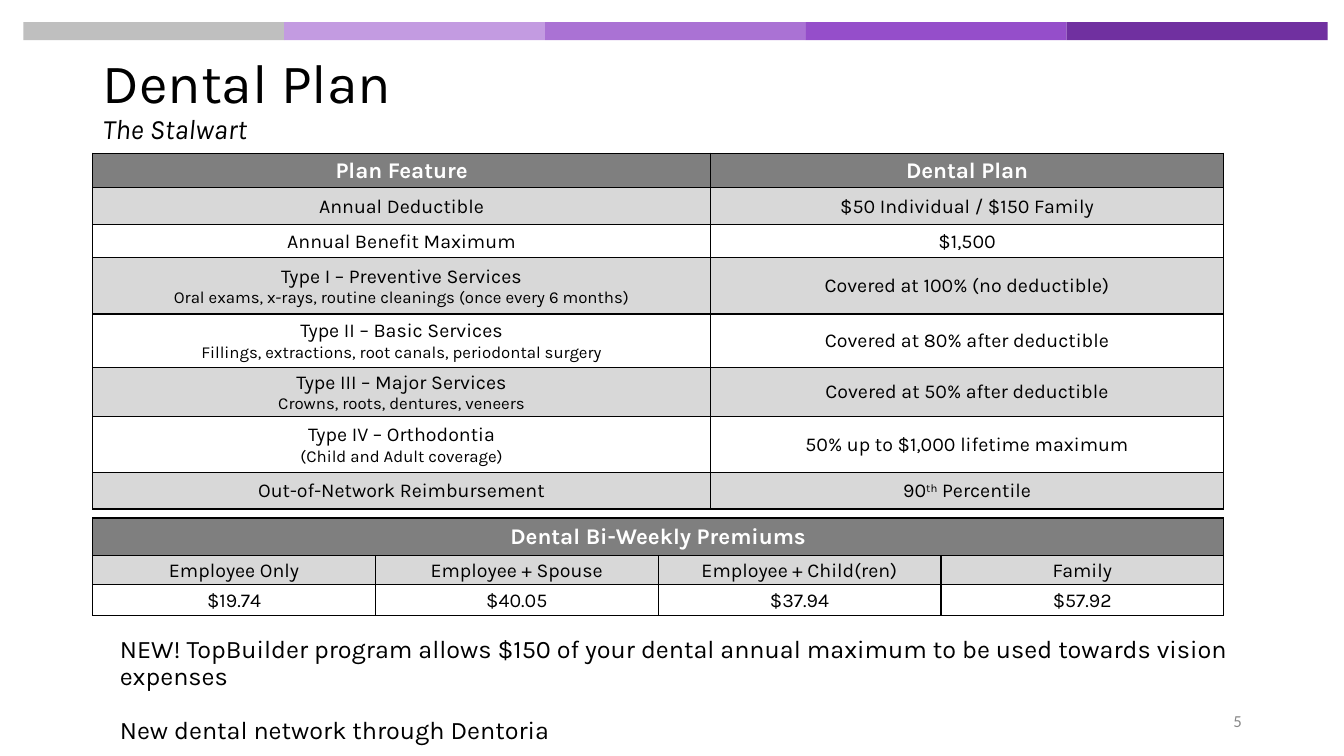
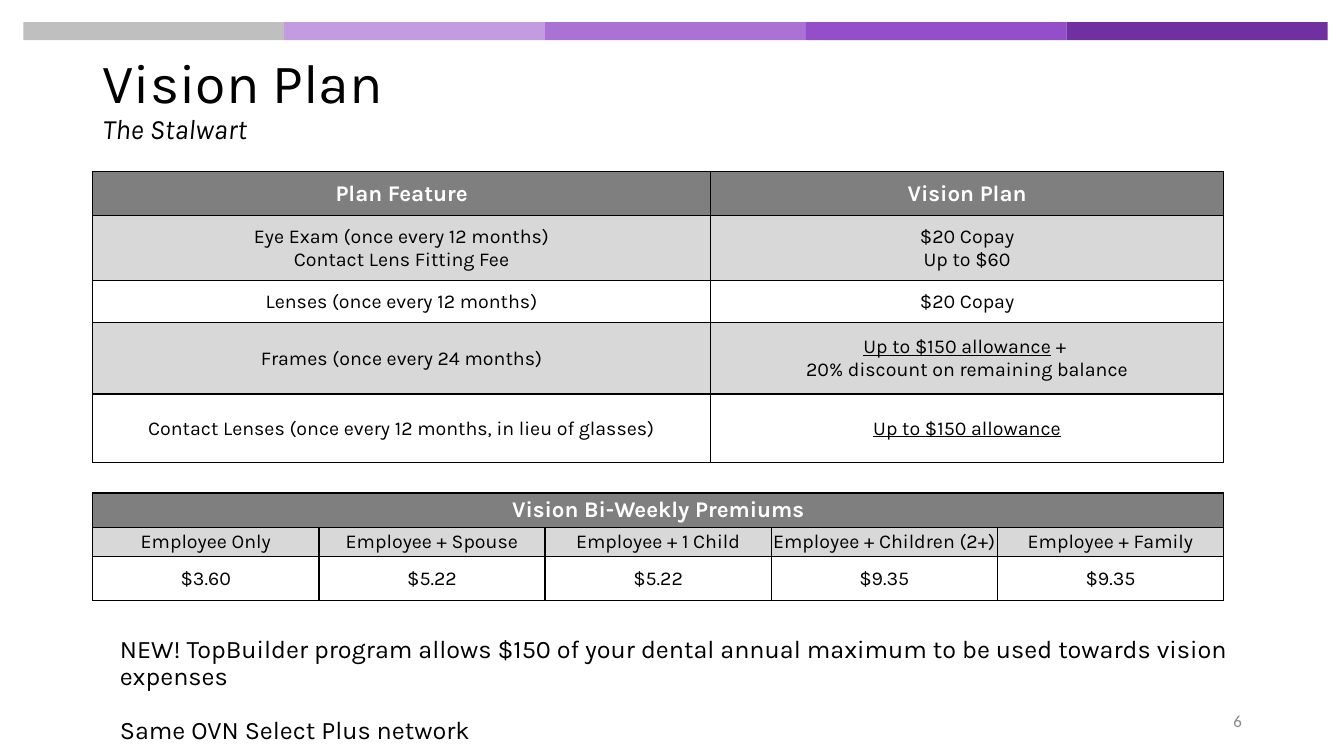
from dataclasses import dataclass

from lxml import etree
from pptx import Presentation
from pptx.dml.color import RGBColor
from pptx.enum.shapes import MSO_SHAPE
from pptx.enum.text import MSO_ANCHOR, PP_ALIGN
from pptx.oxml.ns import qn
from pptx.util import Inches, Pt

RECTANGLE = MSO_SHAPE.RECTANGLE
LEFT, CENTER, RIGHT = PP_ALIGN.LEFT, PP_ALIGN.CENTER, PP_ALIGN.RIGHT
TOP, MIDDLE = MSO_ANCHOR.TOP, MSO_ANCHOR.MIDDLE
SLIDE_WIDTH, SLIDE_HEIGHT = Inches(13.333), Inches(7.5)
BLANK_LAYOUT = 6


@dataclass(frozen=True)
class Theme:
    font: str = "Karla"
    number_font: str = "Calibri"
    ink: str = "000000"
    white: str = "FFFFFF"
    header: str = "7F7F7F"
    shade: str = "D8D8D8"
    number: str = "888888"
    band: tuple = ("BFBFBF", "C39BE1", "AA72D4", "954ECA", "7030A0")
    title_size: float = 39.6
    subtitle_size: float = 20
    note_size: float = 18
    header_size: float = 16
    body_size: float = 14
    detail_size: float = 12
    note_gap: float = 19
    border: float = 1


THEME = Theme()


@dataclass(frozen=True)
class Box:
    """Area in slide units."""
    left: int
    top: int
    width: int
    height: int

    @property
    def bounds(self):
        return self.left, self.top, self.width, self.height

    def columns(self, count):
        edges = [self.left + self.width * i // count for i in range(count + 1)]
        return [Box(start, self.top, end - start, self.height)
                for start, end in zip(edges, edges[1:])]


def share(left, top, width, height):
    """Box given in percent of the slide's width and height."""
    return Box(round(SLIDE_WIDTH * left / 100), round(SLIDE_HEIGHT * top / 100),
               round(SLIDE_WIDTH * width / 100), round(SLIDE_HEIGHT * height / 100))


BAND_BOX = share(1.73, 2.93, 97.05, 2.4)
TITLE_BOX = share(6.9, 6.4, 86.25, 13.87)
NUMBER_BOX = share(70.65, 92.67, 22.5, 5.33)
NOTES_BOX = share(8.18, 83.6, 84.15, 15.47)


def table_box(top, height):
    return share(6.9, top, 84.15, height)


@dataclass(frozen=True)
class Run:
    """Piece of text that departs from the format of its frame."""
    text: str
    size: float = 0
    italic: bool = False
    underline: bool = False
    superscript: bool = False


def detail(text):
    return [Run(text, size=THEME.detail_size)]


def color(value):
    return RGBColor.from_string(value)


def write_text(frame, paragraphs, *, size, ink=THEME.ink, font=THEME.font,
               bold=False, align=LEFT, line_spacing=1.0, gap=0):
    """Write paragraphs, each a string or a list of strings and Runs."""
    for index, content in enumerate(paragraphs):
        paragraph = frame.add_paragraph() if index else frame.paragraphs[0]
        paragraph.alignment = align
        paragraph.line_spacing = line_spacing
        paragraph.space_before = Pt(gap if index else 0)
        for part in [content] if isinstance(content, str) else content:
            part = Run(part) if isinstance(part, str) else part
            run = paragraph.add_run()
            run.text = part.text
            run.font.name = font
            run.font.size = Pt(part.size or size)
            run.font.color.rgb = color(ink)
            run.font.bold = bold
            run.font.italic = part.italic
            run.font.underline = part.underline
            if part.superscript:
                run.font.size = Pt(size)
                run._r.get_or_add_rPr().set("baseline", "30000")


def add_text(slide, box, paragraphs, *, anchor=TOP, **text_format):
    frame = slide.shapes.add_textbox(*box.bounds).text_frame
    frame.word_wrap = True
    frame.vertical_anchor = anchor
    write_text(frame, paragraphs, **text_format)


def add_band(slide, box):
    for fill, part in zip(THEME.band, box.columns(len(THEME.band))):
        shape = slide.shapes.add_shape(RECTANGLE, *part.bounds)
        shape.shadow.inherit = False
        shape.fill.solid()
        shape.fill.fore_color.rgb = color(fill)
        shape.line.fill.background()


def set_borders(cell):
    properties = cell._tc.get_or_add_tcPr()
    for index, side in enumerate(("lnL", "lnR", "lnT", "lnB")):
        line = etree.Element(qn(f"a:{side}"), w=str(Pt(THEME.border)))
        fill = etree.SubElement(line, qn("a:solidFill"))
        etree.SubElement(fill, qn("a:srgbClr"), val=THEME.ink)
        properties.insert(index, line)


def format_cell(cell, content, row_index):
    is_header = row_index == 0
    fill = THEME.header if is_header else THEME.shade if row_index % 2 else THEME.white
    cell.fill.solid()
    cell.fill.fore_color.rgb = color(fill)
    set_borders(cell)
    cell.vertical_anchor = MIDDLE
    cell.margin_left = cell.margin_right = cell.margin_top = Inches(0.01)
    cell.margin_bottom = 0
    if content:
        write_text(cell.text_frame,
                   [content] if isinstance(content, str) else content,
                   size=THEME.header_size if is_header else THEME.body_size,
                   ink=THEME.white if is_header else THEME.ink,
                   bold=is_header, align=CENTER)


def add_plan_table(slide, box, rows, column_weights, row_weights):
    """Fill the box with a table; a lone first cell spans the whole header."""
    table = slide.shapes.add_table(len(rows), len(column_weights), *box.bounds).table
    table.first_row = table.horz_banding = False
    for column, weight in zip(table.columns, column_weights):
        column.width = round(box.width * weight / sum(column_weights))
    for row, weight in zip(table.rows, row_weights):
        row.height = round(box.height * weight / sum(row_weights))
    for row_index, contents in enumerate(rows):
        padded = contents + [None] * (len(column_weights) - len(contents))
        for column_index, content in enumerate(padded):
            format_cell(table.cell(row_index, column_index), content, row_index)
    if len(rows[0]) == 1:
        table.cell(0, 0).merge(table.cell(0, len(column_weights) - 1))


def add_plan_slide(presentation, plan):
    slide = presentation.slides.add_slide(presentation.slide_layouts[BLANK_LAYOUT])
    add_text(slide, TITLE_BOX,
             [plan["title"],
              [Run("The Stalwart", size=THEME.subtitle_size, italic=True)]],
             size=THEME.title_size, anchor=MIDDLE, line_spacing=0.9)
    add_text(slide, NUMBER_BOX, [plan["number"]], size=THEME.detail_size,
             ink=THEME.number, font=THEME.number_font, align=RIGHT, anchor=MIDDLE)
    add_band(slide, BAND_BOX)
    add_plan_table(slide, plan["feature_box"],
                   [["Plan Feature", plan["title"]]] + plan["features"],
                   (6.13, 5.09), plan["feature_heights"])
    tiers, prices = zip(*plan["premiums"])
    add_plan_table(slide, plan["premium_box"],
                   [[plan["premium_title"]], list(tiers), list(prices)],
                   [1] * len(tiers), plan["premium_heights"])
    add_text(slide, NOTES_BOX,
             ["NEW! TopBuilder program allows $150 of your dental annual maximum "
              "to be used towards vision expenses", plan["network"]],
             size=THEME.note_size, line_spacing=0.9, gap=THEME.note_gap)


DENTAL = {
    "title": "Dental Plan",
    "number": "5",
    "feature_box": table_box(20.27, 47.07),
    "feature_heights": (0.34, 0.37, 0.33, 0.56, 0.53, 0.49, 0.56, 0.36),
    "features": [
        ["Annual Deductible", "$50 Individual / $150 Family"],
        ["Annual Benefit Maximum", "$1,500"],
        [["Type I – Preventive Services",
          detail("Oral exams, x-rays, routine cleanings (once every 6 months)")],
         "Covered at 100% (no deductible)"],
        [["Type II – Basic Services",
          detail("Fillings, extractions, root canals, periodontal surgery")],
         "Covered at 80% after deductible"],
        [["Type III – Major Services", detail("Crowns, roots, dentures, veneers")],
         "Covered at 50% after deductible"],
        [["Type IV – Orthodontia", detail("(Child and Adult coverage)")],
         "50% up to $1,000 lifetime maximum"],
        ["Out-of-Network Reimbursement",
         [["90", Run("th", superscript=True), " Percentile"]]],
    ],
    "premium_box": table_box(68.53, 12.93),
    "premium_heights": (0.37, 0.29, 0.31),
    "premium_title": "Dental Bi-Weekly Premiums",
    "premiums": [("Employee Only", "$19.74"), ("Employee + Spouse", "$40.05"),
                 ("Employee + Child(ren)", "$37.94"), ("Family", "$57.92")],
    "network": "New dental network through Dentoria",
}

ALLOWANCE = Run("Up to $150 allowance", underline=True)
VISION = {
    "title": "Vision Plan",
    "number": "6",
    "feature_box": table_box(22.67, 38.53),
    "feature_heights": (0.44, 0.64, 0.42, 0.71, 0.68),
    "features": [
        [["Eye Exam (once every 12 months)", "Contact Lens Fitting Fee"],
         ["$20 Copay", "Up to $60"]],
        ["Lenses (once every 12 months)", "$20 Copay"],
        ["Frames (once every 24 months)",
         [[ALLOWANCE, " + "], "20% discount on remaining balance"]],
        ["Contact Lenses (once every 12 months, in lieu of glasses)", [[ALLOWANCE]]],
    ],
    "premium_box": table_box(65.2, 14.27),
    "premium_heights": (0.34, 0.29, 0.44),
    "premium_title": "Vision Bi-Weekly Premiums",
    "premiums": [("Employee Only", "$3.60"), ("Employee + Spouse", "$5.22"),
                 ("Employee + 1 Child", "$5.22"),
                 ("Employee + Children (2+)", "$9.35"),
                 ("Employee + Family", "$9.35")],
    "network": "Same OVN Select Plus network",
}


def main():
    presentation = Presentation()
    presentation.slide_width, presentation.slide_height = SLIDE_WIDTH, SLIDE_HEIGHT
    for plan in (DENTAL, VISION):
        add_plan_slide(presentation, plan)
    presentation.save("out.pptx")


if __name__ == "__main__":
    main()
